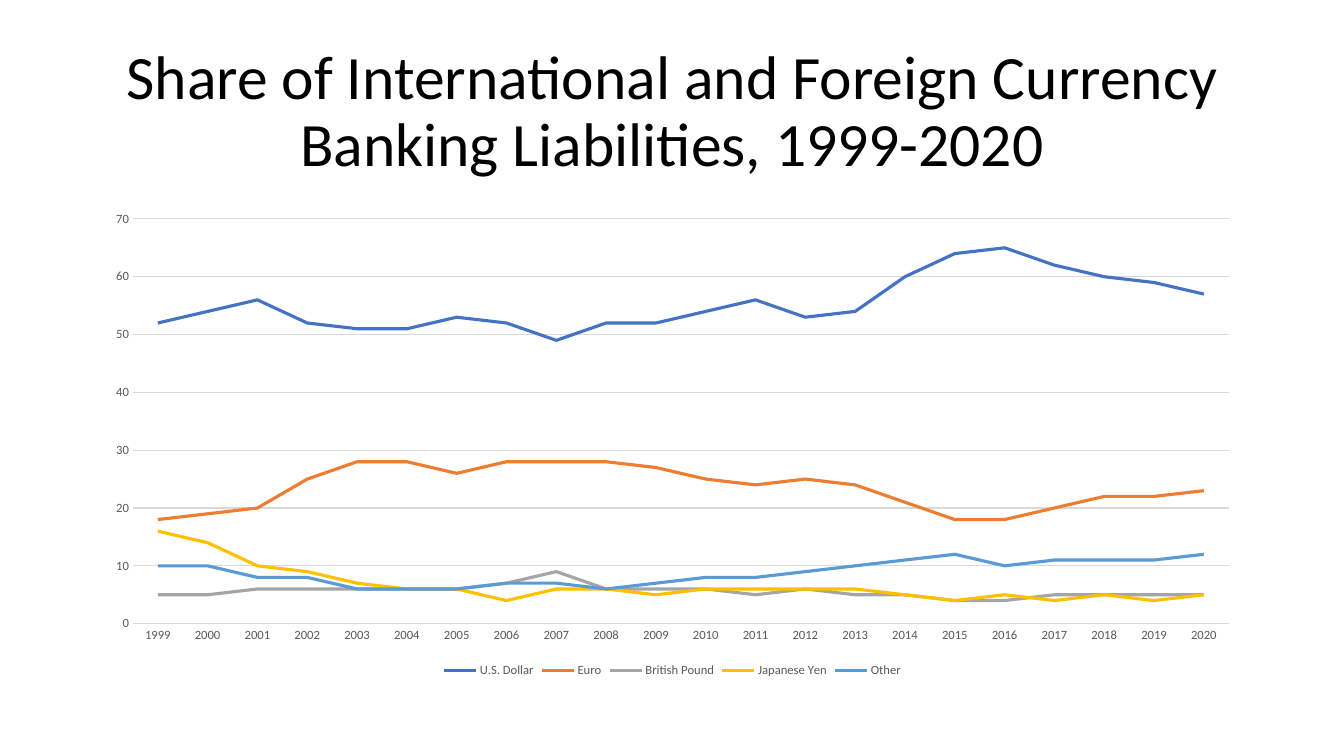
from pptx import Presentation
from pptx.chart.data import CategoryChartData
from pptx.dml.color import RGBColor
from pptx.enum.chart import XL_CHART_TYPE, XL_LEGEND_POSITION, XL_MARKER_STYLE, XL_TICK_MARK
from pptx.enum.text import MSO_ANCHOR, PP_ALIGN
from pptx.util import Emu, Pt

PX = 914400 / 100.8
FONT = "Calibri"
BLACK = RGBColor(0x00, 0x00, 0x00)
LABEL_GRAY = RGBColor(0x59, 0x59, 0x59)
GRID_GRAY = RGBColor(0xD9, 0xD9, 0xD9)
BLUE = RGBColor(0x44, 0x72, 0xC4)
ORANGE = RGBColor(0xED, 0x7D, 0x31)
GRAY = RGBColor(0xA5, 0xA5, 0xA5)
GOLD = RGBColor(0xFF, 0xC0, 0x00)
LIGHT_BLUE = RGBColor(0x5B, 0x9B, 0xD5)

YEARS = [str(year) for year in range(1999, 2021)]
SHARES = [
    ("U.S. Dollar", BLUE, [52, 54, 56, 52, 51, 51, 53, 52, 49, 52, 52,
                           54, 56, 53, 54, 60, 64, 65, 62, 60, 59, 57]),
    ("Euro", ORANGE, [18, 19, 20, 25, 28, 28, 26, 28, 28, 28, 27,
                      25, 24, 25, 24, 21, 18, 18, 20, 22, 22, 23]),
    ("British Pound", GRAY, [5, 5, 6, 6, 6, 6, 6, 7, 9, 6, 6,
                             6, 5, 6, 5, 5, 4, 4, 5, 5, 5, 5]),
    ("Japanese Yen", GOLD, [16, 14, 10, 9, 7, 6, 6, 4, 6, 6, 5,
                            6, 6, 6, 6, 5, 4, 5, 4, 5, 4, 5]),
    ("Other", LIGHT_BLUE, [10, 10, 8, 8, 6, 6, 6, 7, 7, 6, 7,
                           8, 8, 9, 10, 11, 12, 10, 11, 11, 11, 12]),
]


def px(*lengths):
    return [Emu(round(n * PX)) for n in lengths]


def style_font(font, size, color):
    font.name = FONT
    font.size = Pt(size)
    font.color.rgb = color


def style_line(line, color, width):
    line.color.rgb = color
    line.width = Pt(width)


def add_title(s, text, box):
    sp = s.shapes.add_textbox(*px(*box))
    tf = sp.text_frame
    tf.word_wrap = True
    tf.vertical_anchor = MSO_ANCHOR.MIDDLE
    p = tf.paragraphs[0]
    p.alignment = PP_ALIGN.CENTER
    p.line_spacing = 0.9
    r = p.add_run()
    r.text = text
    style_font(r.font, 44, BLACK)


def style_axes(chart):
    for axis in (chart.category_axis, chart.value_axis):
        axis.major_tick_mark = XL_TICK_MARK.NONE
        axis.minor_tick_mark = XL_TICK_MARK.NONE
        style_font(axis.tick_labels.font, 9, LABEL_GRAY)
    style_line(chart.category_axis.format.line, GRID_GRAY, 0.75)
    value_axis = chart.value_axis
    value_axis.minimum_scale = 0
    value_axis.maximum_scale = 70
    value_axis.major_unit = 10
    value_axis.format.line.fill.background()
    style_line(value_axis.major_gridlines.format.line, GRID_GRAY, 0.75)


def add_line_chart(s, box):
    data = CategoryChartData()
    data.categories = YEARS
    for name, _, values in SHARES:
        data.add_series(name, values)
    chart = s.shapes.add_chart(XL_CHART_TYPE.LINE, *px(*box), data).chart
    chart.has_title = False
    style_font(chart.font, 10, BLACK)
    style_axes(chart)
    chart.has_legend = True
    chart.legend.position = XL_LEGEND_POSITION.BOTTOM
    chart.legend.include_in_layout = False
    style_font(chart.legend.font, 9, LABEL_GRAY)
    plot = chart.plots[0]
    plot.vary_by_categories = False
    for series, (_, color, _) in zip(plot.series, SHARES):
        series.smooth = False
        series.marker.style = XL_MARKER_STYLE.NONE
        style_line(series.format.line, color, 2.25)


def main():
    prs = Presentation()
    prs.slide_width, prs.slide_height = px(1344, 756)
    s = prs.slides.add_slide(prs.slide_layouts[6])
    add_title(s, "Share of International and Foreign Currency Banking Liabilities, 1999-2020",
              (93, 40, 1159, 146))
    add_line_chart(s, (93, 202, 1159, 480))
    prs.save("out.pptx")


if __name__ == "__main__":
    main()
